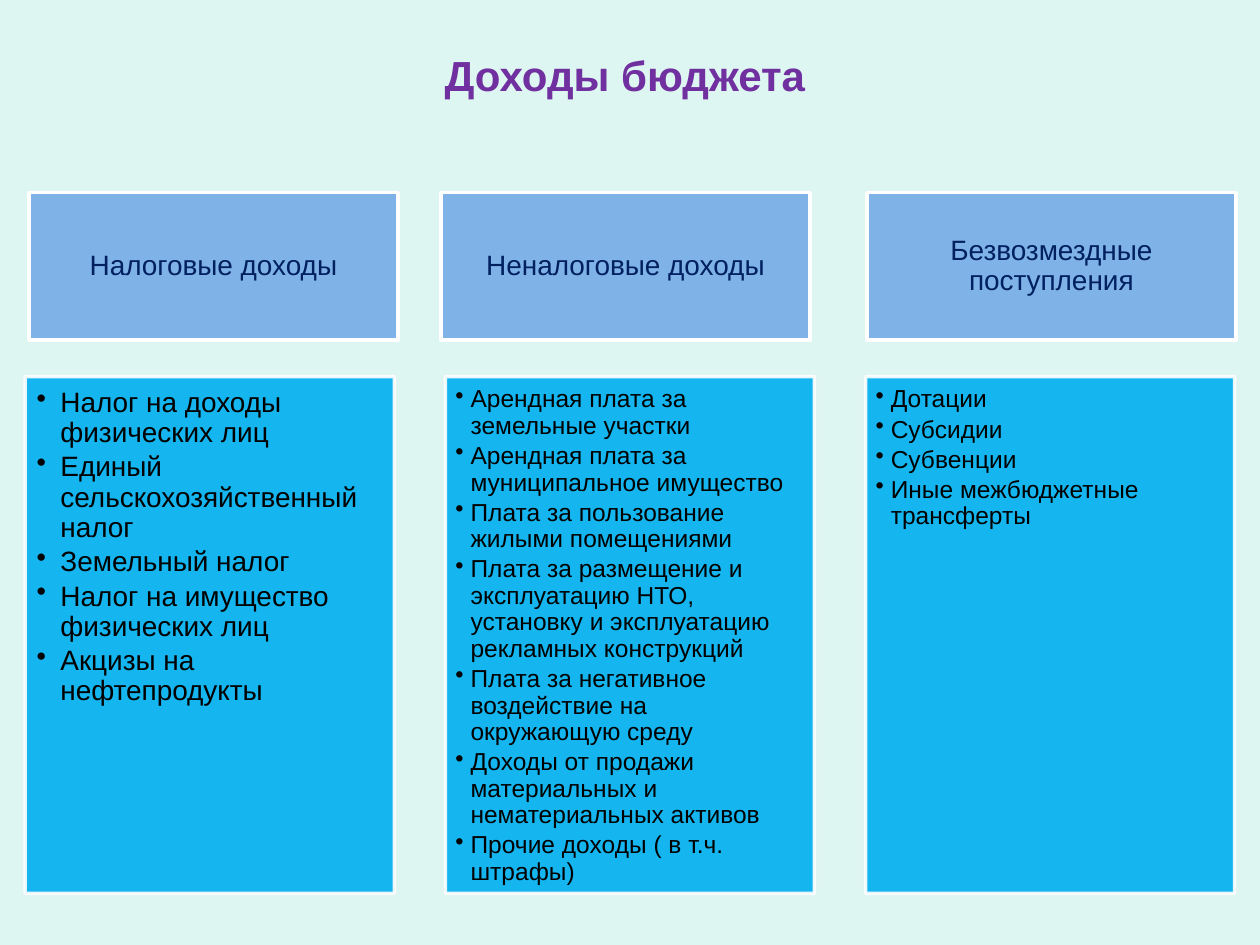
from lxml.etree import SubElement
from pptx import Presentation
from pptx.dml.color import RGBColor
from pptx.enum.shapes import MSO_SHAPE as SHAPE
from pptx.enum.text import MSO_ANCHOR as ANCHOR, MSO_AUTO_SIZE as AUTO, PP_ALIGN as ALIGN
from pptx.oxml.ns import qn
from pptx.util import Inches, Pt

COLORS = {"background": "DEF6F1", "title": "7030A0", "heading": "7FB3E7",
          "heading_text": "002060", "list": "00B0F0", "list_text": "000000",
          "border": "FFFFFF"}
BOX_W, HEAD_TOP, HEAD_H, LIST_TOP, LIST_H = 2.93, 1.53, 1.17, 2.99, 4.1
LIST_LEFT, LIST_PITCH = 0.2, 3.335

# heading, heading left, list text size, hanging indent, list insets, items
COLUMNS = [
    ("Налоговые доходы", 0.23, 16, 0.19, (0.09, 0.09, 0.12, 0.14), [
        "Налог на доходы физических лиц",
        "Единый сельскохозяйственный налог",
        "Земельный налог",
        "Налог на имущество физических лиц",
        "Акцизы на нефтепродукты"]),
    ("Неналоговые доходы", 3.5, 14, 0.12, (0.08, 0.08, 0.11, 0.12), [
        "Арендная плата за земельные участки",
        "Арендная плата за муниципальное имущество",
        "Плата за пользование жилыми помещениями",
        "Плата за размещение и эксплуатацию НТО, установку и эксплуатацию "
        "рекламных конструкций",
        "Плата за негативное воздействие на окружающую среду",
        "Доходы от продажи материальных и нематериальных активов",
        "Прочие доходы ( в т.ч. штрафы)"]),
    ("Безвозмездные поступления", 6.88, 14, 0.12, (0.08, 0.08, 0.11, 0.12), [
        "Дотации",
        "Субсидии",
        "Субвенции",
        "Иные межбюджетные трансферты"]),
]


def add_box(left, top, height, name, insets, lines, size, anchor, align, after):
    """Add a bordered rectangle holding one paragraph per line."""
    s = slide.shapes.add_shape(SHAPE.RECTANGLE, Inches(left), Inches(top),
                               Inches(BOX_W), Inches(height))
    s.shadow.inherit = False
    s.fill.solid()
    s.fill.fore_color.rgb = RGBColor.from_string(COLORS[name])
    s.line.color.rgb = RGBColor.from_string(COLORS["border"])
    s.line.width = Pt(2)
    tf = s.text_frame
    tf.word_wrap = True
    tf.vertical_anchor = anchor
    tf.margin_left, tf.margin_top, tf.margin_right, tf.margin_bottom = map(Inches, insets)
    tf.text = "\n".join(lines)
    for p in tf.paragraphs:
        p.alignment = align
        p.line_spacing = 0.9
        p.space_after = Pt(round(size * after, 1))
        style_run(p.runs[0], size, COLORS[name + "_text"])
    return s


def style_run(r, size, color):
    r.font.name = "Arial"
    r.font.size = Pt(size)
    r.font.color.rgb = RGBColor.from_string(color)


prs = Presentation()
prs.slide_width, prs.slide_height = Inches(10), Inches(7.5)
slide = prs.slides.add_slide(prs.slide_layouts[6])
slide.background.fill.solid()
slide.background.fill.fore_color.rgb = RGBColor.from_string(COLORS["background"])

title = slide.shapes.add_textbox(Inches(3.43), Inches(0.34), Inches(3.09), Inches(0.5))
tf = title.text_frame
tf.word_wrap = False
tf.auto_size = AUTO.SHAPE_TO_FIT_TEXT
tf.text = "Доходы бюджета"
r = tf.paragraphs[0].runs[0]
style_run(r, 24, COLORS["title"])
r.font.bold = True

for i, (heading, head_left, size, indent, insets, items) in enumerate(COLUMNS):
    add_box(head_left, HEAD_TOP, HEAD_H, "heading", (0.12, 0.07, 0.12, 0.07),
            [heading], 16, ANCHOR.MIDDLE, ALIGN.CENTER, 0.35)
    s = add_box(LIST_LEFT + i * LIST_PITCH, LIST_TOP, LIST_H, "list", insets,
                items, size, ANCHOR.TOP, ALIGN.LEFT, 0.15)
    for color in s._element.spPr.iter(qn("a:srgbClr")):
        SubElement(color, qn("a:alpha"), val="90000")
    for p in s.text_frame.paragraphs:
        p.level = 1
        pPr = p._p.get_or_add_pPr()
        pPr.set("marL", str(Inches(indent)))
        pPr.set("indent", str(-Inches(indent)))
        SubElement(pPr, qn("a:buChar"), char="•")

prs.save("out.pptx")
